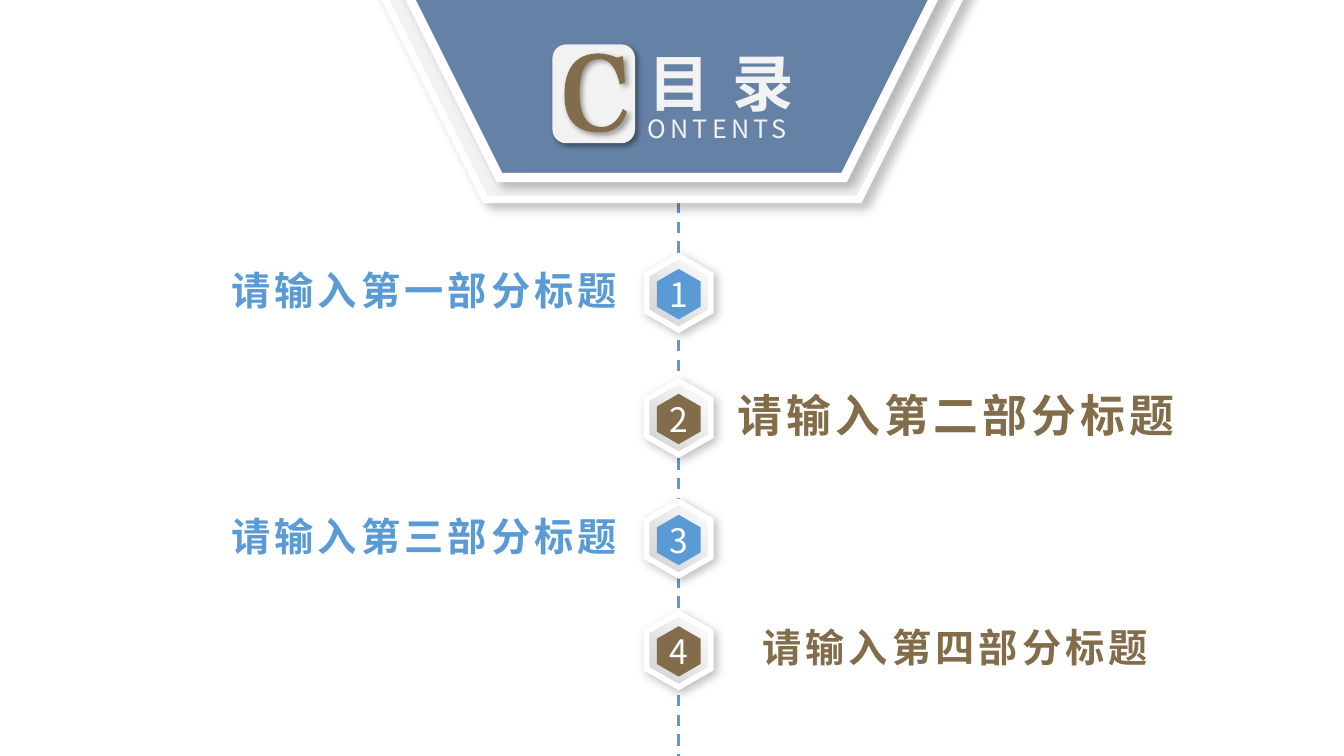
from lxml.etree import SubElement
from pptx import Presentation
from pptx.dml.color import RGBColor
from pptx.enum.dml import MSO_LINE
from pptx.enum.shapes import MSO_CONNECTOR, MSO_SHAPE
from pptx.enum.text import MSO_ANCHOR, MSO_AUTO_SIZE, PP_ALIGN
from pptx.oxml.ns import qn
from pptx.util import Pt

FONT = "Noto Sans CJK SC"
BLUE, BROWN, SLATE = "5B9BD5", "826C4A", "6582A6"
WHITE, PALE, GREY = "FFFFFF", "F2F2F2", "D0D0D0"
AXIS_X = 484.8

# label, colour, badge centre, label left, label width, size, alignment
SECTIONS = [
    ("请输入第一部分标题", BLUE, 209.2, 133.2, 314.6, 28, PP_ALIGN.RIGHT),
    ("请输入第二部分标题", BROWN, 298.4, 512.6, 381.6, 32, PP_ALIGN.LEFT),
    ("请输入第三部分标题", BLUE, 384.8, 133.2, 314.6, 28, PP_ALIGN.RIGHT),
    ("请输入第四部分标题", BROWN, 464.4, 512.6, 314.6, 28, PP_ALIGN.RIGHT),
]

# Each segment of the letter C: one point is a line end, three make a curve
LETTER_START = (446.4, 59)
LETTER_SEGMENTS = [
    [(445, 40.3)],
    [(445, 40.3), (444.2, 40.3), (443.5, 40.3)],
    [(442.8, 41), (442, 41), (441.4, 41)],
    [(440.6, 41), (439.2, 41), (438.5, 40.3)],
    [(434.2, 38.9), (430.6, 38.2), (427, 38.2)],
    [(411.1, 38.5), (403.2, 49), (403.2, 67.7)],
    [(403.2, 85.7), (411.1, 94.3), (427.7, 94.6)],
    [(437.8, 95), (445, 90), (447.8, 79.9)],
    [(445, 77.8)],
    [(441.4, 86.4), (436.3, 90.7), (429.8, 90.7)],
    [(419, 90.7), (414, 82.1), (414, 66.2)],
    [(414, 50.4), (418.3, 42.5), (427.7, 42.3)],
    [(434.9, 41.8), (439.9, 47.5), (442.8, 60.5)],
]


def color(value):
    return RGBColor.from_string(value)


def style(shape, fill, line=None, line_width=0, shadow=None):
    """Fill and outline a shape; shadow is (opacity %, blur, distance)."""
    shape.shadow.inherit = False
    shape.fill.solid()
    shape.fill.fore_color.rgb = color(fill)
    if line:
        shape.line.color.rgb = color(line)
        shape.line.width = Pt(line_width)
        outline = shape.element.spPr.find(qn("a:ln"))
        SubElement(outline, qn("a:miter"), lim="800000")
    else:
        shape.line.fill.background()
    if shadow:
        opacity, blur, distance = shadow
        effects = shape.element.spPr.find(qn("a:effectLst"))
        outer = SubElement(effects, qn("a:outerShdw"), blurRad=str(Pt(blur)),
                           dist=str(Pt(distance)), dir="2700000",
                           algn="tl", rotWithShape="0")
        black = SubElement(outer, qn("a:srgbClr"), val="000000")
        SubElement(black, qn("a:alpha"), val=str(opacity * 1000))


def write(shape, text, size, fill, align=PP_ALIGN.CENTER, bold=False,
          spacing=0, wrap=False, insets=(0, 0, 0, 0)):
    frame = shape.text_frame
    left, top, right, bottom = map(Pt, insets)
    frame_format = {
        "auto_size": MSO_AUTO_SIZE.NONE, "word_wrap": wrap,
        "vertical_anchor": MSO_ANCHOR.MIDDLE,
        "margin_left": left, "margin_top": top,
        "margin_right": right, "margin_bottom": bottom,
    }
    for name, value in frame_format.items():
        setattr(frame, name, value)
    paragraph = frame.paragraphs[0]
    paragraph.alignment = align
    run = paragraph.add_run()
    run.text = text
    for name, value in {"name": FONT, "size": Pt(size), "bold": bold}.items():
        setattr(run.font, name, value)
    run.font.color.rgb = color(fill)
    properties = run.font._element
    properties.set("spc", str(spacing * 100))
    SubElement(properties, qn("a:ea"), typeface=FONT)


def add_outline(slide, points):
    corners = [(Pt(x), Pt(y)) for x, y in points]
    builder = slide.shapes.build_freeform(*corners[0])
    builder.add_line_segments(corners[1:], close=True)
    return builder.convert_to_shape()


def add_upright_hexagon(slide, center_y, half_width, half_height):
    sides = [(0, -1), (1, -0.5), (1, 0.5), (0, 1), (-1, 0.5), (-1, -0.5)]
    return add_outline(slide, [(AXIS_X + x * half_width,
                                center_y + y * half_height) for x, y in sides])


def add_badge(slide, number, fill, center_y):
    ring = add_upright_hexagon(slide, center_y, 23, 26.4)
    style(ring, WHITE, WHITE, 4, (25, 7, 3))
    ring.fill.gradient()
    ring.fill.gradient_angle = 45
    for stop, shade in zip(ring.fill.gradient_stops, (GREY, WHITE)):
        stop.color.rgb = color(shade)
    core = add_upright_hexagon(slide, center_y + 0.9, 15.6, 18)
    style(core, fill)
    write(core, str(number), 24, WHITE)


def add_label(slide, text, fill, center_y, left, width, size, align):
    box = slide.shapes.add_textbox(Pt(left), Pt(center_y - 23.4),
                                   Pt(width), Pt(42.5))
    write(box, text, size, fill, align, True, 3, True, (14.4, 3.6, 7.2, 3.6))


def add_axis(slide):
    axis = slide.shapes.add_connector(MSO_CONNECTOR.STRAIGHT, Pt(AXIS_X),
                                      Pt(116), Pt(AXIS_X), Pt(540))
    axis.line.color.rgb = color(BLUE)
    axis.line.width = Pt(2)
    axis.line.dash_style = MSO_LINE.DASH
    SubElement(axis.element.spPr, qn("a:effectLst"))


def add_preset(slide, kind, left, top, width, height, **look):
    shape = slide.shapes.add_shape(kind, Pt(left), Pt(top),
                                   Pt(width), Pt(height))
    style(shape, **look)


def letter_points(steps=12):
    """Trace the letter C, sampling its cubic curves."""
    points = [LETTER_START]
    for segment in LETTER_SEGMENTS:
        if len(segment) == 1:
            points += segment
            continue
        controls = [points[-1], *segment]
        for step in range(1, steps + 1):
            t = step / steps
            weights = ((1 - t) ** 3, 3 * t * (1 - t) ** 2,
                       3 * t ** 2 * (1 - t), t ** 3)
            points.append(tuple(sum(w * c[axis] for w, c in zip(weights, controls))
                                for axis in (0, 1)))
    return points


def add_heading(slide):
    shadow = (23, 7, 5.9)
    add_preset(slide, MSO_SHAPE.HEXAGON, 245.5, -262, 469.4, 404.6,
               fill=PALE, line=WHITE, line_width=5, shadow=shadow)
    add_preset(slide, MSO_SHAPE.HEXAGON, 263.5, -246.2, 432.7, 373,
               fill=SLATE, line=WHITE, line_width=6.5, shadow=shadow)
    add_preset(slide, MSO_SHAPE.ROUNDED_RECTANGLE, 394.6, 31.7, 59, 70.6,
               fill=PALE, shadow=(40, 4, 3))
    title = slide.shapes.title
    place = {"left": 445.2, "top": 27.4, "width": 140, "height": 61.9}
    for name, value in place.items():
        setattr(title, name, Pt(value))
    write(title, "目 录", 44, PALE, bold=True, spacing=3)
    title.element.getparent().append(title.element)  # in front of the banner
    subtitle = slide.shapes.add_textbox(Pt(442.8), Pt(60.5), Pt(139), Pt(61.9))
    write(subtitle, "ONTENTS", 18, PALE, spacing=3)
    style(add_outline(slide, letter_points()), BROWN, shadow=(40, 4, 3))


def main():
    presentation = Presentation()
    presentation.slide_width, presentation.slide_height = Pt(960), Pt(540)
    slide = presentation.slides.add_slide(presentation.slide_layouts[5])
    add_axis(slide)
    for number, section in enumerate(SECTIONS, 1):
        add_label(slide, *section)
        add_badge(slide, number, *section[1:3])
    add_heading(slide)
    presentation.save("out.pptx")


if __name__ == "__main__":
    main()
